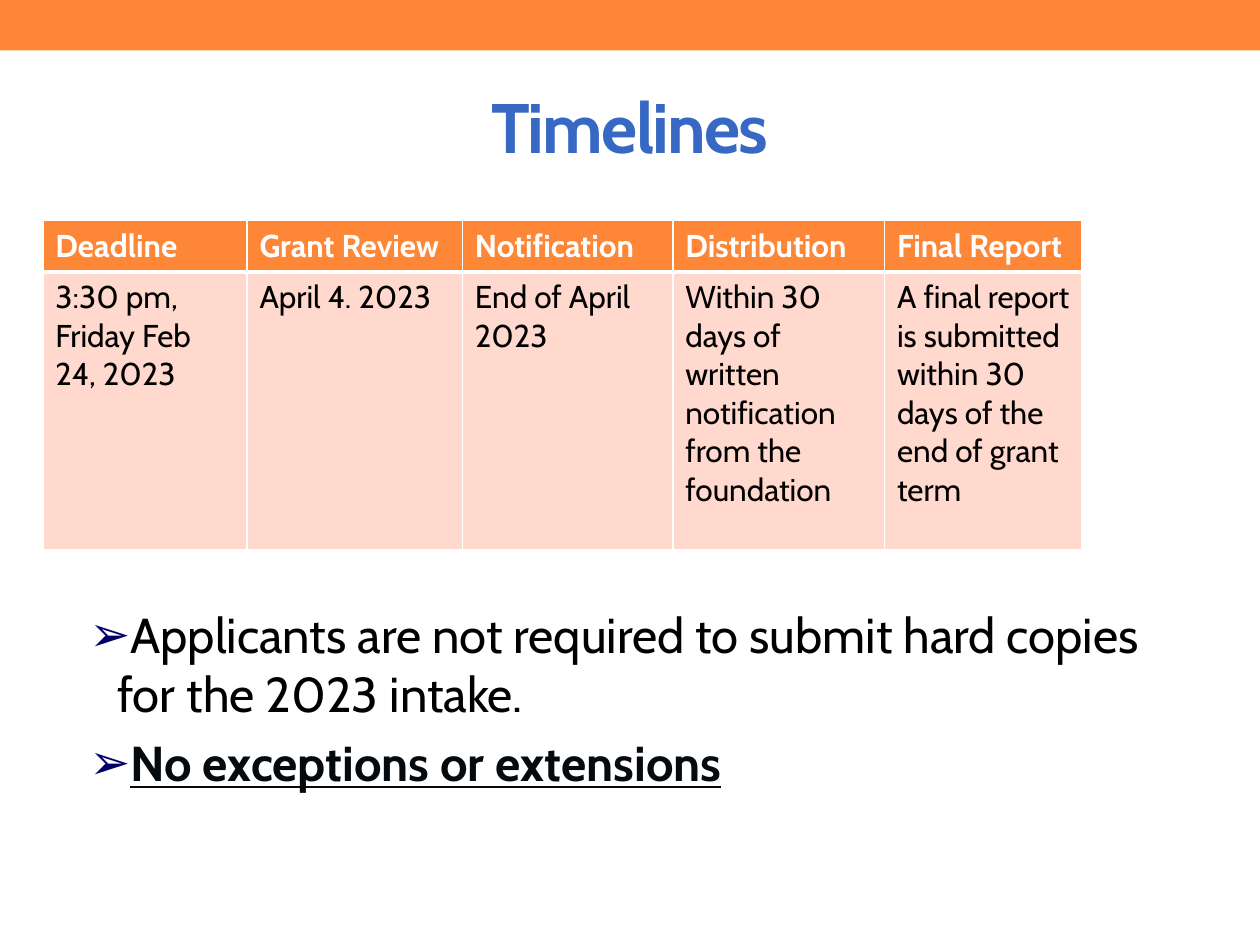
from typing import NamedTuple

from lxml.etree import SubElement
from pptx import Presentation
from pptx.dml.color import RGBColor
from pptx.enum.shapes import MSO_SHAPE
from pptx.enum.text import MSO_ANCHOR, MSO_AUTO_SIZE, PP_ALIGN
from pptx.oxml.ns import qn
from pptx.util import Inches, Pt

ORANGE = RGBColor(0xFE, 0x86, 0x37)
PINK = RGBColor(0xFF, 0xD9, 0xCE)
BLUE = RGBColor(0x36, 0x68, 0xC4)
NAVY = RGBColor(0x00, 0x00, 0x66)
WHITE = RGBColor(0xFF, 0xFF, 0xFF)
BLACK = RGBColor(0x00, 0x00, 0x00)
NEAR_BLACK = RGBColor(0x05, 0x0A, 0x0F)
FONT = "Cabin"


class Milestone(NamedTuple):
    heading: str
    detail: str
    width: float


class Note(NamedTuple):
    text: str
    color: RGBColor
    strong: bool


MILESTONES = [
    Milestone("Deadline", "3:30 pm, Friday Feb 24, 2023", 1.62),
    Milestone("Grant Review", "April 4. 2023", 1.71),
    Milestone("Notification", "End of April 2023", 1.67),
    Milestone("Distribution", "Within 30 days of written notification from the foundation", 1.68),
    Milestone("Final Report", "A final report is submitted within 30 days of the end of grant term", 1.57),
]
NOTES = [
    Note("Applicants are not required to submit hard copies for the 2023 intake.", BLACK, False),
    Note("No exceptions or extensions", NEAR_BLACK, True),
]
ROW_HEIGHTS = [0.41, 2.2]


def add_text(p, text: str, *, size: float, color: RGBColor, bold=False, underline=False):
    r = p.add_run()
    r.text = text
    r.font.name = FONT
    r.font.size = Pt(size)
    r.font.color.rgb = color
    r.font.bold = bold
    r.font.underline = underline
    return r


def place(sp, left: float, top: float, width: float, height: float) -> None:
    sp.left, sp.top = Inches(left), Inches(top)
    sp.width, sp.height = Inches(width), Inches(height)


def set_borders(cell, bottom: float) -> None:
    """White borders of 1 pt, except for the given bottom width."""
    tc_pr = cell._tc.get_or_add_tcPr()
    for side, width in (("L", 1), ("R", 1), ("T", 1), ("B", bottom)):
        ln = SubElement(tc_pr, qn(f"a:ln{side}"), w=str(Pt(width)))
        fill = SubElement(ln, qn("a:solidFill"))
        SubElement(fill, qn("a:srgbClr"), val=str(WHITE))


def set_bullet(p, char: str, color: RGBColor) -> None:
    p_pr = p._p.get_or_add_pPr()
    p_pr.set("marL", str(Inches(0.5)))
    p_pr.set("indent", str(Inches(-0.22)))
    bu_clr = SubElement(p_pr, qn("a:buClr"))
    SubElement(bu_clr, qn("a:srgbClr"), val=str(color))
    SubElement(p_pr, qn("a:buChar"), char=char)


def add_bar(s) -> None:
    sp = s.shapes.add_shape(MSO_SHAPE.RECTANGLE, 0, 0, Inches(10), Inches(0.4))
    sp.shadow.inherit = False
    sp.fill.solid()
    sp.fill.fore_color.rgb = ORANGE
    sp.line.fill.background()


def fill_title(sp) -> None:
    place(sp, 0.94, 0.5, 8.12, 1)
    tf = sp.text_frame
    tf.vertical_anchor = MSO_ANCHOR.MIDDLE
    p = tf.paragraphs[0]
    p.alignment = PP_ALIGN.CENTER
    r = add_text(p, "Timelines", size=40, color=BLUE, bold=True)
    r.font._element.set("spc", "-100")


def add_timeline_table(s) -> None:
    width = sum(m.width for m in MILESTONES)
    table = s.shapes.add_table(
        len(ROW_HEIGHTS), len(MILESTONES), Inches(0.34), Inches(1.75),
        Inches(width), Inches(sum(ROW_HEIGHTS))).table
    table.horz_banding = False
    for row, height in zip(table.rows, ROW_HEIGHTS):
        row.height = Inches(height)
    for col, milestone in enumerate(MILESTONES):
        table.columns[col].width = Inches(milestone.width)
        for row, text in enumerate((milestone.heading, milestone.detail)):
            header = row == 0
            cell = table.cell(row, col)
            set_borders(cell, bottom=3 if header else 1)
            cell.fill.solid()
            cell.fill.fore_color.rgb = ORANGE if header else PINK
            add_text(cell.text_frame.paragraphs[0], text, size=18,
                     color=WHITE if header else BLACK, bold=header)


def fill_notes(sp) -> None:
    place(sp, 0.33, 4.75, 9.17, 1.6)
    tf = sp.text_frame
    tf.word_wrap = True
    tf.auto_size = MSO_AUTO_SIZE.SHAPE_TO_FIT_TEXT
    for i, note in enumerate(NOTES):
        p = tf.add_paragraph() if i else tf.paragraphs[0]
        p.level = 1
        p.space_before, p.space_after = Pt(0), Pt(6)
        set_bullet(p, "➢", NAVY)
        add_text(p, note.text, size=28, color=note.color,
                 bold=note.strong, underline=note.strong)


def main() -> None:
    prs = Presentation()
    prs.slide_width, prs.slide_height = Inches(10), Inches(7.5)
    s = prs.slides.add_slide(prs.slide_layouts[1])
    add_bar(s)
    fill_title(s.shapes.title)
    add_timeline_table(s)
    fill_notes(s.placeholders[1])
    prs.save("out.pptx")


if __name__ == "__main__":
    main()
